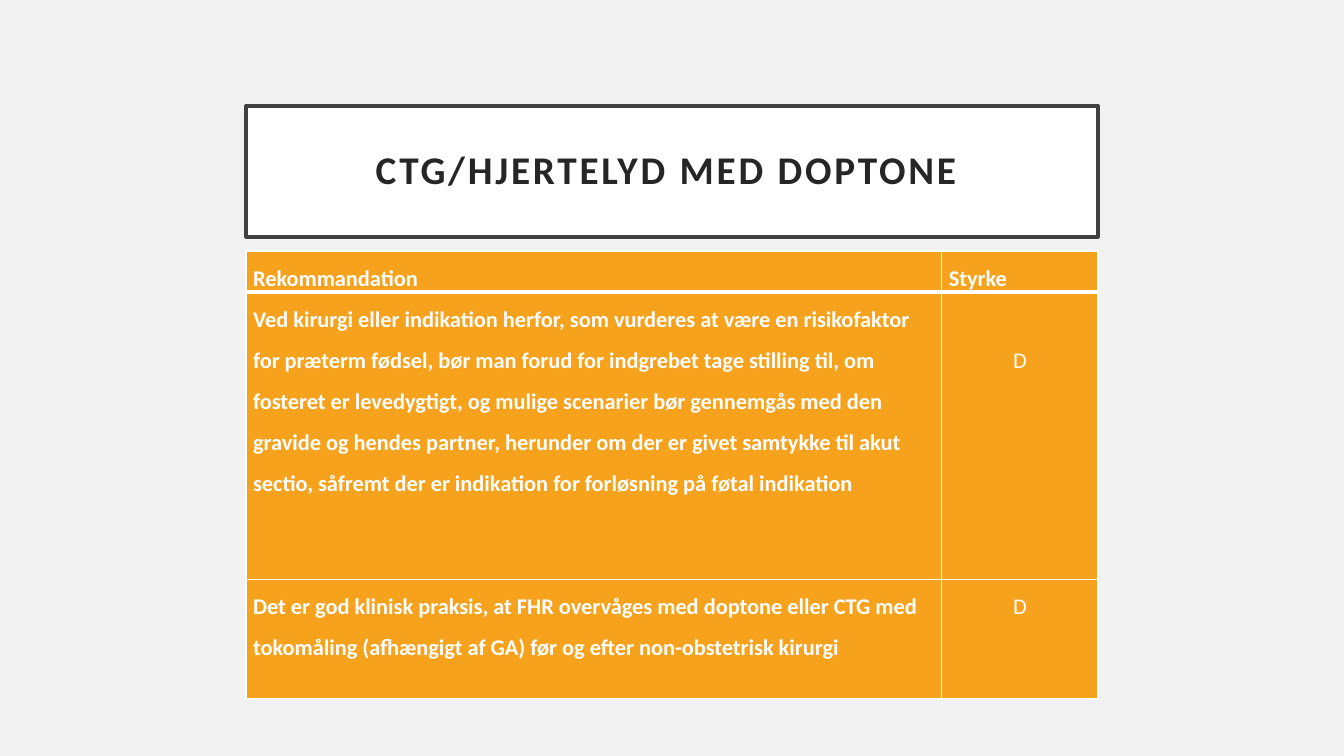
from lxml import etree
from pptx import Presentation
from pptx.dml.color import RGBColor
from pptx.enum.shapes import MSO_SHAPE
from pptx.enum.text import MSO_ANCHOR, PP_ALIGN
from pptx.oxml.ns import qn
from pptx.util import Inches, Pt

RECT = MSO_SHAPE.RECTANGLE
MIDDLE = MSO_ANCHOR.MIDDLE
LEFT, CENTER = PP_ALIGN.LEFT, PP_ALIGN.CENTER

COLORS = {
    "background": "F2F2F2",
    "white": "FFFFFF",
    "frame": "404040",
    "title": "262626",
    "orange": "F6A21D",
}
FONT = "Calibri"


def add_text(tf, text, size, color, bold, align, spacing):
    """Fill the first paragraph of a text frame and return its run."""
    p = tf.paragraphs[0]
    p.alignment = align
    p.line_spacing = spacing
    r = p.add_run()
    r.text = text
    r.font.name = FONT
    r.font.size = Pt(size)
    r.font.bold = bold
    r.font.color.rgb = RGBColor.from_string(COLORS[color])
    return r


def add_border(cell, side, width):
    """Draw one white cell border; side is L, R, T or B."""
    tcPr = cell._tc.get_or_add_tcPr()
    ln = etree.SubElement(tcPr, qn(f"a:ln{side}"), w=str(Pt(width)))
    fill = etree.SubElement(ln, qn("a:solidFill"))
    etree.SubElement(fill, qn("a:srgbClr"), val=COLORS["white"])


prs = Presentation()
prs.slide_width = Inches(13.33)
prs.slide_height = Inches(7.5)
s = prs.slides.add_slide(prs.slide_layouts[6])
s.background.fill.solid()
s.background.fill.fore_color.rgb = RGBColor.from_string(COLORS["background"])

# Title box
sp = s.shapes.add_shape(RECT, Inches(2.44), Inches(1.05), Inches(8.45), Inches(1.3))
sp.shadow.inherit = False
sp.fill.solid()
sp.fill.fore_color.rgb = RGBColor.from_string(COLORS["white"])
sp.line.color.rgb = RGBColor.from_string(COLORS["frame"])
sp.line.width = Pt(2.5)
tf = sp.text_frame
tf.word_wrap = True
tf.vertical_anchor = MIDDLE
tf.margin_left = tf.margin_right = tf.margin_top = tf.margin_bottom = Inches(0.2)
r = add_text(tf, "CTG/HJERTELYD MED DOPTONE ", 28, "title", True, CENTER, 0.9)
r.font._element.set("spc", "200")

# Recommendations: text, strength, space above the strength
rows = [
    ("Rekommandation", "Styrke", 0),
    ("Ved kirurgi eller indikation herfor, som vurderes at være en risikofaktor "
     "for præterm fødsel, bør man forud for indgrebet tage stilling til, om "
     "fosteret er levedygtigt, og mulige scenarier bør gennemgås med den "
     "gravide og hendes partner, herunder om der er givet samtykke til akut "
     "sectio, såfremt der er indikation for forløsning på føtal indikation", "D", 0.41),
    ("Det er god klinisk praksis, at FHR overvåges med doptone eller CTG med "
     "tokomåling (afhængigt af GA) før og efter non-obstetrisk kirurgi", "D", 0),
]
col_widths = [6.9, 1.55]
row_heights = [0.39, 2.85, 1.18]

table = s.shapes.add_table(len(rows), len(col_widths), Inches(2.44), Inches(2.49),
                           Inches(8.45), Inches(4.42)).table
for column, width in zip(table.columns, col_widths):
    column.width = Inches(width)
for row, height in zip(table.rows, row_heights):
    row.height = Inches(height)

for i, (recommendation, strength, space_above) in enumerate(rows):
    for j, text in enumerate((recommendation, strength)):
        cell = table.cell(i, j)
        is_grade = i > 0 and j == 1
        cell.margin_left = cell.margin_right = Inches(0.07)
        cell.margin_top = Inches(space_above if is_grade else 0)
        cell.margin_bottom = 0
        add_text(cell.text_frame, text, 16, "white", not is_grade,
                 CENTER if is_grade else LEFT, 1.5)
        add_border(cell, "L", 1)
        add_border(cell, "R", 1)
        add_border(cell, "T", 3 if i == 1 else 1)
        add_border(cell, "B", 3 if i == 0 else 1)
        cell.fill.solid()
        cell.fill.fore_color.rgb = RGBColor.from_string(COLORS["orange"])

prs.save("out.pptx")
